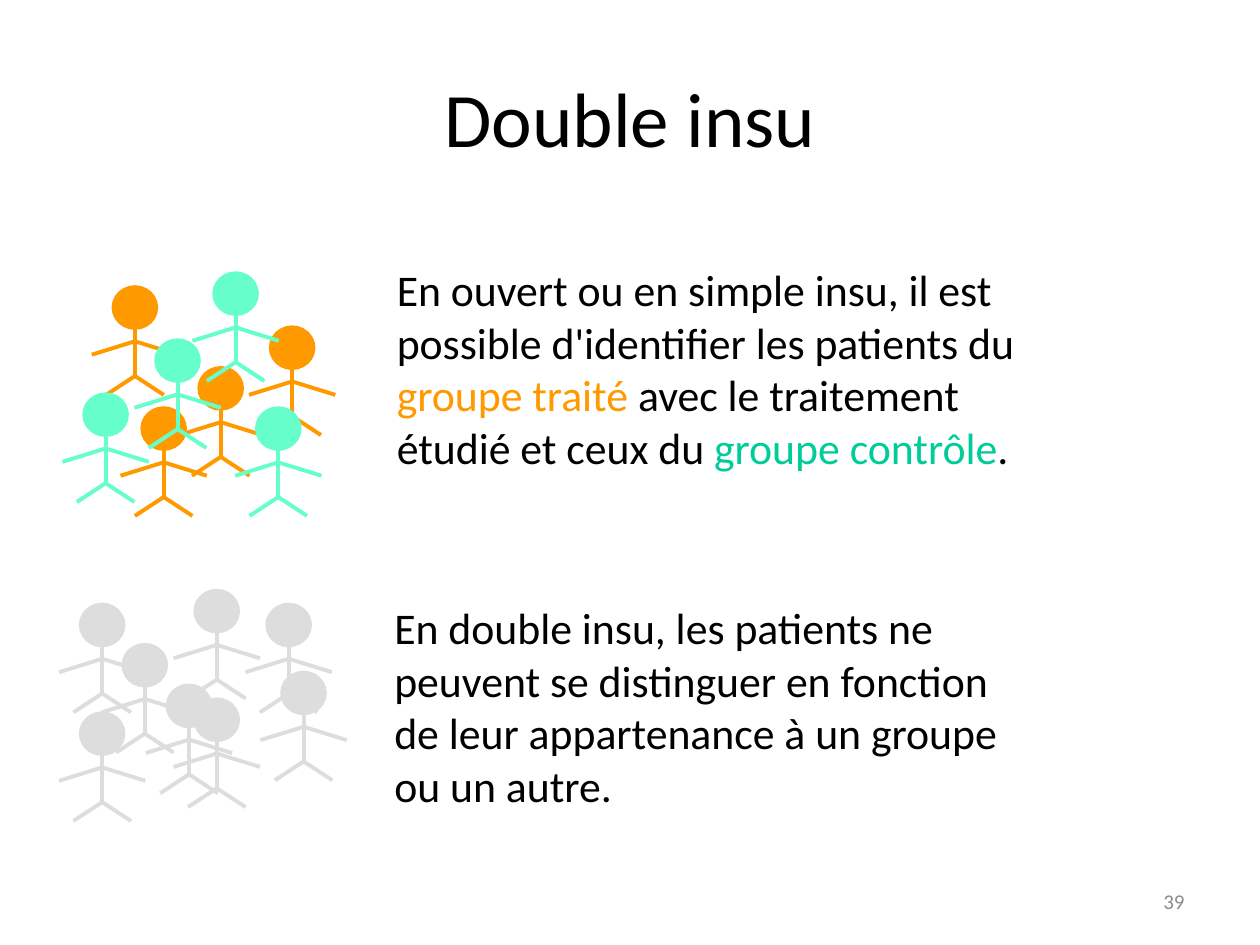
from pptx import Presentation
from pptx.dml.color import RGBColor
from pptx.enum.shapes import MSO_CONNECTOR as CONN, MSO_SHAPE as SHAPE
from pptx.enum.text import MSO_ANCHOR as ANCHOR, PP_ALIGN as ALIGN
from pptx.oxml.ns import qn
from pptx.util import Cm, Pt
from lxml import etree

COLORS = {
    "text": "000000",
    "treated": "FF9900",
    "control": "66FFCC",
    "control_text": "00CC99",
    "blinded": "DDDDDD",
    "number": "8C8C8C",
}

# Head size, and body lines relative to the middle of the head's top edge (cm)
HEAD_W, HEAD_H = 0.86, 0.82
SHOULDER, HIP = (0, 1.09), (0, 1.79)
BODY_LINES = [
    ((0, HEAD_H), HIP),
    (HIP, (-0.58, 2.17)),
    (HIP, (0.58, 2.17)),
    (SHOULDER, (-0.87, 1.36)),
    (SHOULDER, (0.87, 1.36)),
]

# Patients by crowd: group colour, then (x, y) of the top of each head (cm)
OPEN_CROWD = [
    ("treated", [(2.72, 5.79), (5.89, 6.6), (3.3, 8.23), (4.45, 7.42)]),
    ("control", [(4.75, 5.51), (3.58, 6.86), (5.61, 8.23), (2.13, 7.95)]),
]
BLINDED_CROWD = [
    ("blinded", [(2.06, 12.19), (2.92, 13), (2.06, 14.38), (3.81, 13.82),
                 (4.37, 11.91), (5.82, 12.19), (4.37, 14.1), (6.12, 13.56)]),
]


def add_text(s, box, runs, size=25, align=ALIGN.LEFT, anchor=ANCHOR.TOP):
    """Add a one-paragraph text box; runs are (text, colour name) pairs."""
    tf = s.shapes.add_textbox(*map(Cm, box)).text_frame
    tf.word_wrap = True
    tf.vertical_anchor = anchor
    p = tf.paragraphs[0]
    p.alignment = align
    for text, color in runs:
        r = p.add_run()
        r.text = text
        r.font.name = "Calibri"
        r.font.size = Pt(size)
        r.font.color.rgb = RGBColor.from_string(COLORS[color])


def add_patient(shapes, x, y, color):
    """Draw a stick figure whose head has its top centre at x, y."""
    rgb = RGBColor.from_string(COLORS[color])
    head = shapes.add_shape(SHAPE.OVAL, Cm(x - HEAD_W / 2), Cm(y), Cm(HEAD_W), Cm(HEAD_H))
    head.shadow.inherit = False
    head.fill.solid()
    head.fill.fore_color.rgb = rgb
    parts = [head]
    for (x1, y1), (x2, y2) in BODY_LINES:
        limb = shapes.add_connector(CONN.STRAIGHT, Cm(x + x1), Cm(y + y1), Cm(x + x2), Cm(y + y2))
        parts.append(limb)
    for sp in parts:
        sp.line.color.rgb = rgb
        sp.line.width = Pt(2.25)
    for limb in parts[1:]:
        etree.SubElement(limb._element.spPr, qn("a:effectLst"))


prs = Presentation()
prs.slide_width, prs.slide_height = Cm(25.4), Cm(19.05)
s = prs.slides.add_slide(prs.slide_layouts[6])

add_text(s, (1.27, 0.76, 22.86, 3.18), [("Double insu", "text")],
         size=44, align=ALIGN.CENTER, anchor=ANCHOR.MIDDLE)

for crowd in (OPEN_CROWD, BLINDED_CROWD):
    group = s.shapes.add_group_shape()
    for color, positions in crowd:
        for x, y in positions:
            add_patient(group.shapes, x, y, color)

add_text(s, (7.75, 5.18, 13.06, 5.54), [
    ("En ouvert ou en simple insu, il est possible d'identifier les patients du ", "text"),
    ("groupe traité", "treated"),
    (" avec le traitement étudié et ceux du ", "text"),
    ("groupe contrôle", "control_text"),
    (".", "text"),
])
add_text(s, (7.7, 11.99, 13.46, 4.5), [
    ("En double insu, les patients ne peuvent se distinguer en fonction "
     "de leur appartenance à un groupe ou un autre.", "text"),
])
add_text(s, (18.2, 17.66, 5.93, 1.01), [("39", "number")],
         size=12, align=ALIGN.RIGHT, anchor=ANCHOR.MIDDLE)

prs.save("out.pptx")
